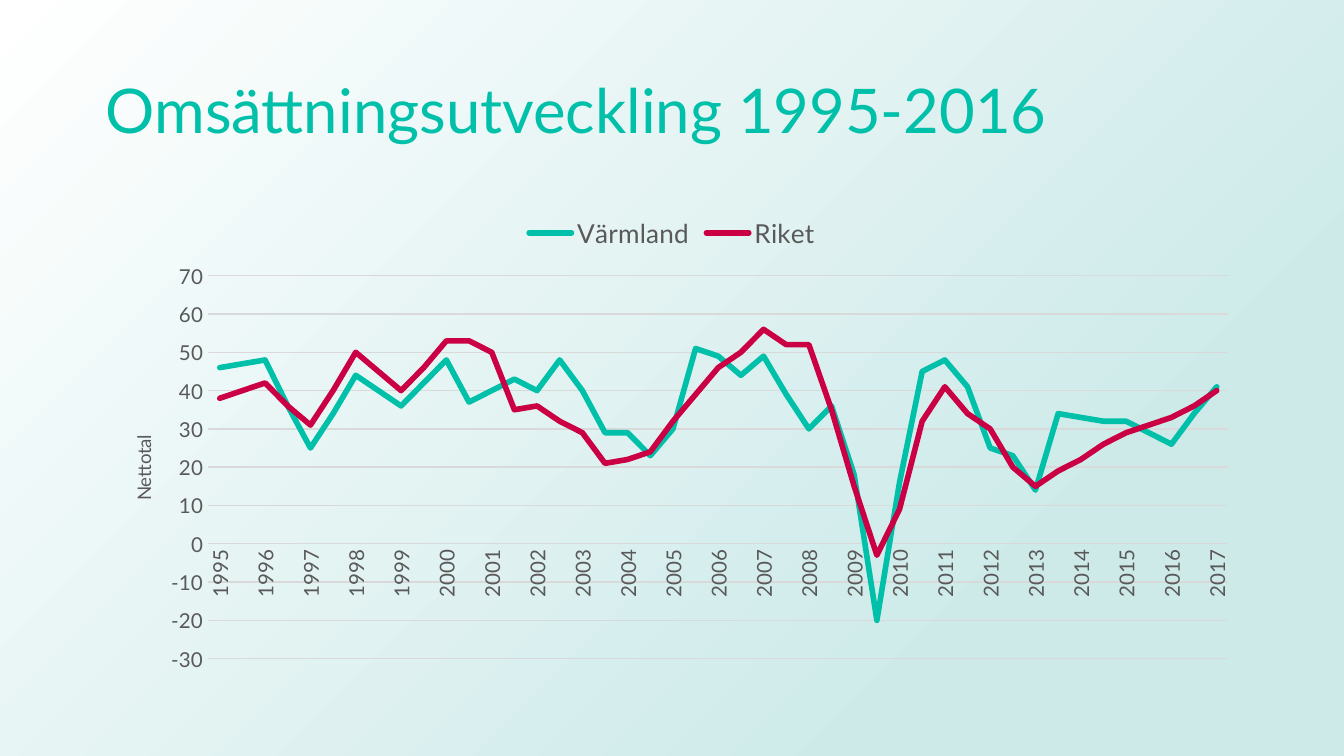
"""Build a slide with a line chart of turnover development, Värmland against the whole country."""
from dataclasses import dataclass

from lxml import etree
from pptx import Presentation
from pptx.chart.data import CategoryChartData
from pptx.dml.color import RGBColor
from pptx.enum.chart import XL_CHART_TYPE, XL_LEGEND_POSITION, XL_TICK_MARK
from pptx.enum.shapes import MSO_SHAPE
from pptx.enum.text import MSO_ANCHOR
from pptx.oxml import parse_xml
from pptx.oxml.ns import nsdecls, qn
from pptx.util import Cm, Pt

LINE_CHART = XL_CHART_TYPE.LINE
LEGEND_TOP = XL_LEGEND_POSITION.TOP
NO_TICK = XL_TICK_MARK.NONE
RECTANGLE = MSO_SHAPE.RECTANGLE
MIDDLE = MSO_ANCHOR.MIDDLE


@dataclass(frozen=True)
class Theme:
    font: str = "Lato"
    teal: RGBColor = RGBColor(0x00, 0xC0, 0xA9)
    crimson: RGBColor = RGBColor(0xCB, 0x00, 0x44)
    label: RGBColor = RGBColor(0x59, 0x59, 0x59)
    grid: RGBColor = RGBColor(0xD9, 0xD9, 0xD9)
    mist: RGBColor = RGBColor(0xCD, 0xEA, 0xE9)
    white: RGBColor = RGBColor(0xFF, 0xFF, 0xFF)
    heading_size: Pt = Pt(33)
    legend_size: Pt = Pt(14)
    tick_size: Pt = Pt(11)
    axis_title_size: Pt = Pt(10)
    series_width: Pt = Pt(3)
    grid_width: Pt = Pt(0.75)


THEME = Theme()
WIDTH, HEIGHT = Cm(25.4), Cm(14.29)
MARGIN, CONTENT_WIDTH = Cm(1.75), Cm(21.9)

HALF_YEARS = [str(1995 + half // 2) for half in range(45)]
TURNOVER = {
    "Värmland": (THEME.teal, [
        46, 47, 48, 36, 25, 34, 44, 40, 36, 42, 48, 37, 40, 43, 40,
        48, 40, 29, 29, 23, 30, 51, 49, 44, 49, 39, 30, 36, 18, -20,
        16, 45, 48, 41, 25, 23, 14, 34, 33, 32, 32, 29, 26, 34, 41]),
    "Riket": (THEME.crimson, [
        38, 40, 42, 36, 31, 40, 50, 45, 40, 46, 53, 53, 50, 35, 36,
        32, 29, 21, 22, 24, 32, 39, 46, 50, 56, 52, 52, 35, 15, -3,
        9, 32, 41, 34, 30, 20, 15, 19, 22, 26, 29, 31, 33, 36, 40]),
}


def style_font(font, size, color):
    font.name = THEME.font
    font.size = size
    font.bold = False
    font.color.rgb = color


def style_line(line, color, width):
    line.color.rgb = color
    line.width = width


def manual_layout(**settings):
    entries = "".join(f'<c:{key} val="{value}"/>' for key, value in settings.items())
    return parse_xml(f'<c:layout {nsdecls("c")}><c:manualLayout>{entries}'
                     '</c:manualLayout></c:layout>')


def add_backdrop(slide):
    backdrop = slide.shapes.add_shape(RECTANGLE, 0, 0, WIDTH, HEIGHT)
    backdrop.shadow.inherit = False
    backdrop.line.fill.background()
    backdrop.fill.gradient()
    shades = ((0.23, THEME.mist), (1, THEME.white))
    for stop, (position, color) in zip(backdrop.fill.gradient_stops, shades):
        stop.position = position
        stop.color.rgb = color
    gradient = backdrop.fill._xPr.find(qn("a:gradFill"))
    gradient.replace(gradient.find(qn("a:lin")), parse_xml(
        f'<a:path {nsdecls("a")} path="circle">'
        '<a:fillToRect l="100000" t="100000"/></a:path>'))


def add_heading(slide, text):
    frame = slide.shapes.add_textbox(MARGIN, Cm(0.76), CONTENT_WIDTH, Cm(2.77)).text_frame
    frame.word_wrap = True
    frame.vertical_anchor = MIDDLE
    frame.text = text
    heading = frame.paragraphs[0]
    heading.line_spacing = 0.9
    style_font(heading.runs[0].font, THEME.heading_size, THEME.teal)


def style_year_axis(axis):
    axis.major_tick_mark = axis.minor_tick_mark = NO_TICK
    style_font(axis.tick_labels.font, THEME.tick_size, THEME.label)
    style_line(axis.format.line, THEME.grid, THEME.grid_width)
    axis._element.find(qn("c:txPr")).find(qn("a:bodyPr")).set("rot", "-5400000")
    multi_level = axis._element.find(qn("c:noMultiLvlLbl"))
    for tag in ("c:tickLblSkip", "c:tickMarkSkip"):
        skip = etree.Element(qn(tag), val="2")
        multi_level.addprevious(skip)


def style_total_axis(axis, title):
    axis.minimum_scale, axis.maximum_scale, axis.major_unit = -30, 70, 10
    axis.major_tick_mark = axis.minor_tick_mark = NO_TICK
    axis.tick_labels.number_format = "0"
    axis.tick_labels.number_format_is_linked = False
    style_font(axis.tick_labels.font, THEME.tick_size, THEME.label)
    axis.format.line.fill.background()
    style_line(axis.major_gridlines.format.line, THEME.grid, THEME.grid_width)
    frame = axis.axis_title.text_frame
    frame.text = title
    style_font(frame.paragraphs[0].runs[0].font, THEME.axis_title_size, THEME.label)
    frame._txBody.find(qn("a:bodyPr")).set("rot", "-5400000")
    heading = axis.axis_title._element
    for old in heading.findall(qn("c:layout")):
        heading.remove(old)
    heading.find(qn("c:tx")).addnext(
        manual_layout(xMode="edge", yMode="edge", x=0.03, y=0.48))


def add_turnover_chart(slide):
    turnover = CategoryChartData(number_format="0")
    turnover.categories = HALF_YEARS
    for region, (_, totals) in TURNOVER.items():
        turnover.add_series(region, totals)
    chart = slide.shapes.add_chart(
        LINE_CHART, MARGIN, Cm(3.81), CONTENT_WIDTH, Cm(9.05), turnover).chart
    chart.has_title = False
    chart.has_legend = True
    chart.legend.position = LEGEND_TOP
    chart.legend.include_in_layout = False
    style_font(chart.legend.font, THEME.legend_size, THEME.label)
    chart.plots[0].vary_by_categories = False
    for series in chart.plots[0].series:
        series.smooth = False
        style_line(series.format.line, TURNOVER[series.name][0], THEME.series_width)
        series.format.line._ln.set("cap", "rnd")
    style_year_axis(chart.category_axis)
    style_total_axis(chart.value_axis, "Nettotal")
    plot_area = chart._chartSpace.chart.plotArea
    for old in plot_area.findall(qn("c:layout")):
        plot_area.remove(old)
    plot_area.insert(0, manual_layout(
        layoutTarget="inner", xMode="edge", yMode="edge", x=0.1, y=0.155, w=0.88, h=0.8))


def main():
    deck = Presentation()
    deck.slide_width, deck.slide_height = WIDTH, HEIGHT
    slide = deck.slides.add_slide(deck.slide_layouts[6])
    add_backdrop(slide)
    add_heading(slide, "Omsättningsutveckling 1995-2016")
    add_turnover_chart(slide)
    deck.save("out.pptx")


if __name__ == "__main__":
    main()
